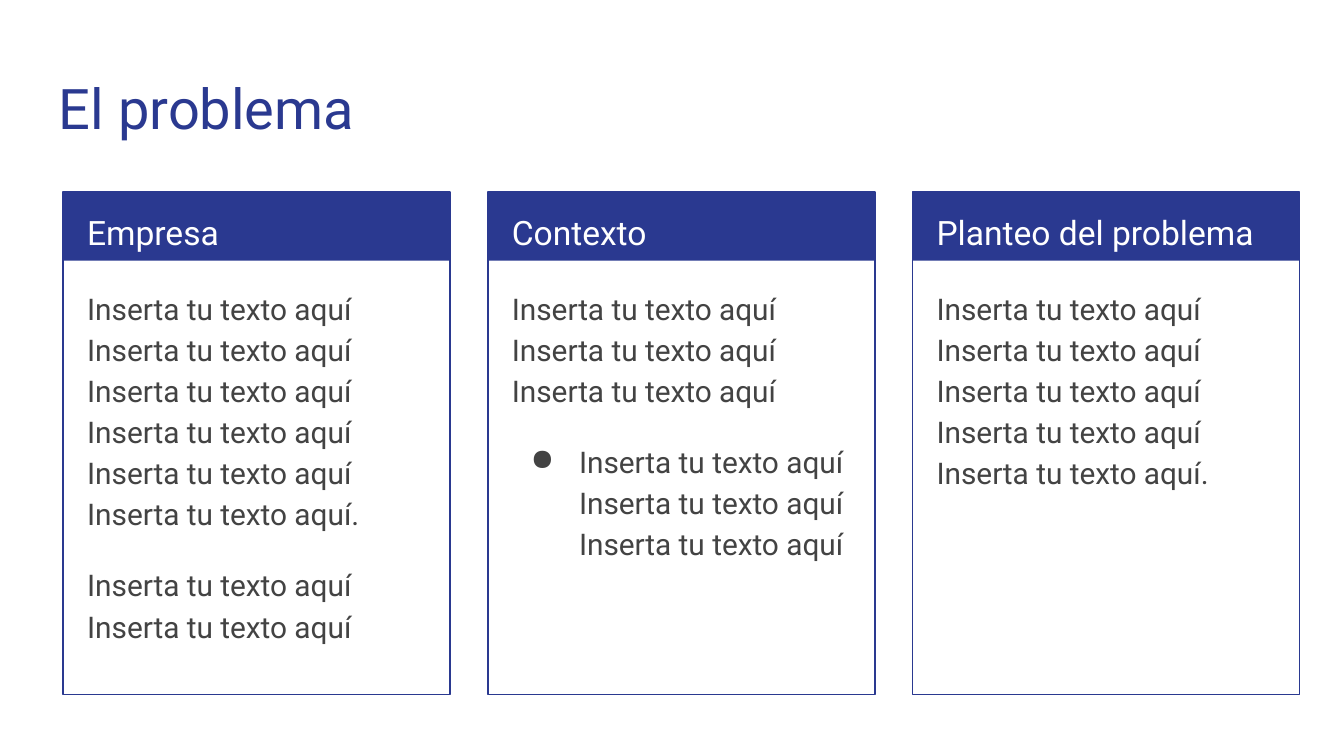
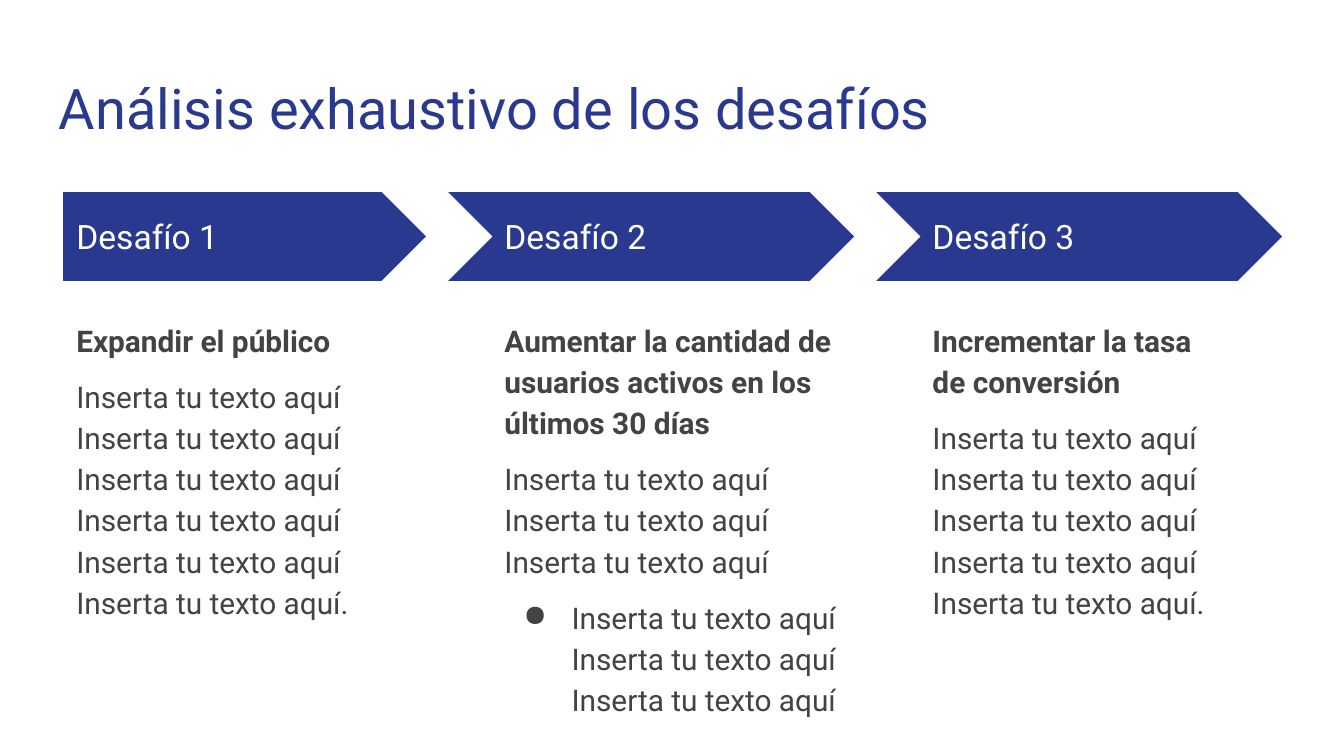
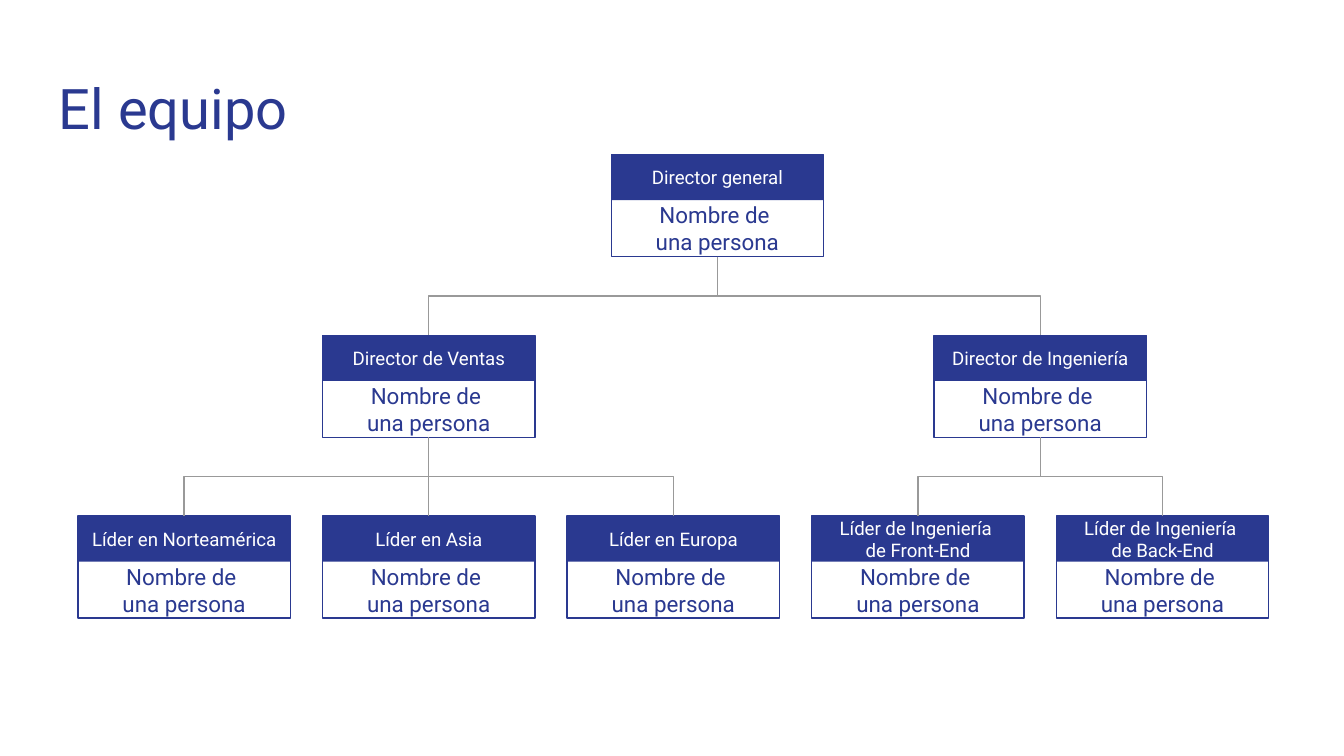
from dataclasses import dataclass

from lxml import etree
from pptx import Presentation
from pptx.dml.color import RGBColor
from pptx.enum.shapes import MSO_CONNECTOR, MSO_SHAPE
from pptx.enum.text import MSO_ANCHOR, PP_ALIGN
from pptx.oxml.ns import qn
from pptx.util import Inches, Pt

RECTANGLE = MSO_SHAPE.RECTANGLE
PENTAGON = MSO_SHAPE.PENTAGON
CHEVRON = MSO_SHAPE.CHEVRON
STRAIGHT = MSO_CONNECTOR.STRAIGHT
ELBOW = MSO_CONNECTOR.ELBOW
TOP = MSO_ANCHOR.TOP
MIDDLE = MSO_ANCHOR.MIDDLE
LEFT = PP_ALIGN.LEFT
CENTER = PP_ALIGN.CENTER
TOP_SIDE, BOTTOM_SIDE = 0, 2

GRID_COLUMNS, GRID_ROWS = 100, 56.25
CELL = Inches(0.1)


@dataclass(frozen=True)
class Theme:
    font: str = "Roboto"
    primary: str = "2A3990"
    on_primary: str = "FFFFFF"
    text: str = "434343"
    connector: str = "999999"
    title_size: int = 30
    heading_size: int = 18
    body_size: int = 16
    name_size: int = 12
    role_size: int = 10
    line_width: float = 0.75
    body_spacing: float = 1.15


@dataclass(frozen=True)
class Line:
    text: str
    before: int = 0
    after: int = 0
    bold: bool = False
    bulleted: bool = False


@dataclass(frozen=True)
class Member:
    role: str
    slot: float
    reports: tuple = ()


def cells(*counts):
    return [round(count * CELL) for count in counts]


def filler(count, ending=""):
    return " ".join(["Inserta tu texto aquí"] * count) + ending


class Deck:
    def __init__(self, theme):
        self.theme = theme
        self.presentation = Presentation()
        self.presentation.slide_width, self.presentation.slide_height = cells(GRID_COLUMNS, GRID_ROWS)
        self.slide = None

    def add_slide(self, title):
        self.slide = self.presentation.slides.add_slide(self.presentation.slide_layouts[6])
        self.text((3.4, 4.5, 93.2, 6.6), [Line(title)], self.theme.title_size, self.theme.primary)

    def text(self, box, lines, size, color, anchor=TOP, alignment=LEFT, spacing=1.0):
        frame = self.slide.shapes.add_textbox(*cells(*box)).text_frame
        frame.word_wrap = True
        frame.vertical_anchor = anchor
        frame.margin_left = frame.margin_right = frame.margin_top = frame.margin_bottom = CELL
        for index, line in enumerate(lines):
            paragraph = frame.add_paragraph() if index else frame.paragraphs[0]
            paragraph.text = line.text
            paragraph.alignment = alignment
            paragraph.line_spacing = spacing
            paragraph.space_before = Pt(line.before)
            paragraph.space_after = Pt(line.after)
            if line.bulleted:
                self.bullet(paragraph, color)
            paragraph.font.name = self.theme.font
            paragraph.font.size = Pt(size)
            paragraph.font.bold = line.bold
            paragraph.font.color.rgb = RGBColor.from_string(color)

    def bullet(self, paragraph, color):
        properties = paragraph._p.get_or_add_pPr()
        properties.set("marL", str(Inches(0.5)))
        properties.set("indent", str(Inches(-0.36)))
        bullet_color = etree.SubElement(properties, qn("a:buClr"))
        etree.SubElement(bullet_color, qn("a:srgbClr"), val=color)
        etree.SubElement(properties, qn("a:buChar"), char="●")

    def body(self, box, lines):
        self.text(box, lines, self.theme.body_size, self.theme.text, spacing=self.theme.body_spacing)

    def filled(self, kind, box):
        shape = self.slide.shapes.add_shape(kind, *cells(*box))
        shape.shadow.inherit = False
        shape.fill.solid()
        shape.fill.fore_color.rgb = RGBColor.from_string(self.theme.primary)
        shape.line.fill.background()

    def outline(self, box):
        shape = self.slide.shapes.add_shape(RECTANGLE, *cells(*box))
        shape.shadow.inherit = False
        shape.fill.background()
        shape.line.color.rgb = RGBColor.from_string(self.theme.primary)
        shape.line.width = Pt(self.theme.line_width)
        return shape

    def panel(self, left, heading, lines):
        self.filled(RECTANGLE, (left, 14.3, 28.8, 5.1))
        self.outline((left, 14.3, 28.8, 37.4))
        self.text((left + 0.8, 14.3, 27.3, 5), [Line(heading)], self.theme.heading_size,
                  self.theme.on_primary, spacing=self.theme.body_spacing)
        self.body((left + 0.8, 20.2, 27.1, 30.6), lines)

    def step(self, left, heading, lines, first):
        notch = 0 if first else 3.2
        self.filled(PENTAGON if first else CHEVRON, (left - notch, 14.3, 27 + notch, 6.6))
        self.text((left, 15.9, 24.7, 3.4), [Line(heading)], self.theme.heading_size,
                  self.theme.on_primary, MIDDLE)
        self.body((left, 22.6, 27, 29), lines)

    def member(self, member, level=0):
        left, top = 5.8 + 18.2 * member.slot, 11.5 + 13.45 * level
        card = self.outline((left, top, 15.8, 7.6))
        self.filled(RECTANGLE, (left, top, 15.8, 3.4))
        self.text((left, top + 0.65, 15.8, 2.1), [Line(member.role)], self.theme.role_size,
                  self.theme.on_primary, MIDDLE, CENTER)
        self.text((left, top + 4.45, 15.8, 2.1), [Line("Nombre de \nuna persona")],
                  self.theme.name_size, self.theme.primary, MIDDLE, CENTER)
        for report in member.reports:
            self.link(card, self.member(report, level + 1))
        return card

    def link(self, upper, lower):
        start_x, start_y = upper.left + upper.width // 2, upper.top + upper.height
        shift = lower.left + lower.width // 2 - start_x
        drop = lower.top - start_y
        is_straight = abs(shift) < CELL
        connector = self.slide.shapes.add_connector(
            STRAIGHT if is_straight else ELBOW, start_x, start_y, start_x + shift, lower.top)
        connector.begin_connect(upper, BOTTOM_SIDE)
        connector.end_connect(lower, TOP_SIDE)
        connector.line.color.rgb = RGBColor.from_string(self.theme.connector)
        connector.line.width = Pt(self.theme.line_width)
        properties = connector._element.spPr
        etree.SubElement(properties, qn("a:effectLst"))
        if not is_straight:
            connector.left = start_x + (shift - drop) // 2
            connector.top = start_y + (drop - abs(shift)) // 2
            connector.width, connector.height = drop, abs(shift)
            transform = properties.find(qn("a:xfrm"))
            transform.set("rot", "16200000" if shift > 0 else "5400000")
            transform.set("flipH", "1" if shift > 0 else "0")
            transform.set("flipV", "0")


PANELS = [
    ("Empresa", [Line(filler(6, ".")), Line(filler(2), before=16, after=16)]),
    ("Contexto", [Line(filler(3)), Line(filler(3), before=16, bulleted=True)]),
    ("Planteo del problema", [Line(filler(5, "."), after=16)]),
]

STEPS = [
    ("Desafío 1", [
        Line("Expandir el público", bold=True),
        Line(filler(6, "."), before=8, after=8),
    ]),
    ("Desafío 2", [
        Line("Aumentar la cantidad de usuarios activos en los últimos 30 días", bold=True),
        Line(filler(3), before=8),
        Line(filler(3), before=8, after=8, bulleted=True),
    ]),
    ("Desafío 3", [
        Line("Incrementar la tasa \nde conversión", bold=True),
        Line(filler(5, "."), before=8, after=8),
    ]),
]

TEAM = Member("Director general", 2.18, (
    Member("Director de Ventas", 1, (
        Member("Líder en Norteamérica", 0),
        Member("Líder en Asia", 1),
        Member("Líder en Europa", 2),
    )),
    Member("Director de Ingeniería", 3.5, (
        Member("Líder de Ingeniería \nde Front-End", 3),
        Member("Líder de Ingeniería \nde Back-End", 4),
    )),
))


def main():
    deck = Deck(Theme())

    deck.add_slide("El problema")
    for index, (heading, lines) in enumerate(PANELS):
        deck.panel(4.7 + 31.6 * index, heading, lines)

    deck.add_slide("Análisis exhaustivo de los desafíos")
    for index, (heading, lines) in enumerate(STEPS):
        deck.step(4.7 + 31.85 * index, heading, lines, first=index == 0)

    deck.add_slide("El equipo")
    deck.member(TEAM)

    deck.presentation.save("out.pptx")


if __name__ == "__main__":
    main()
